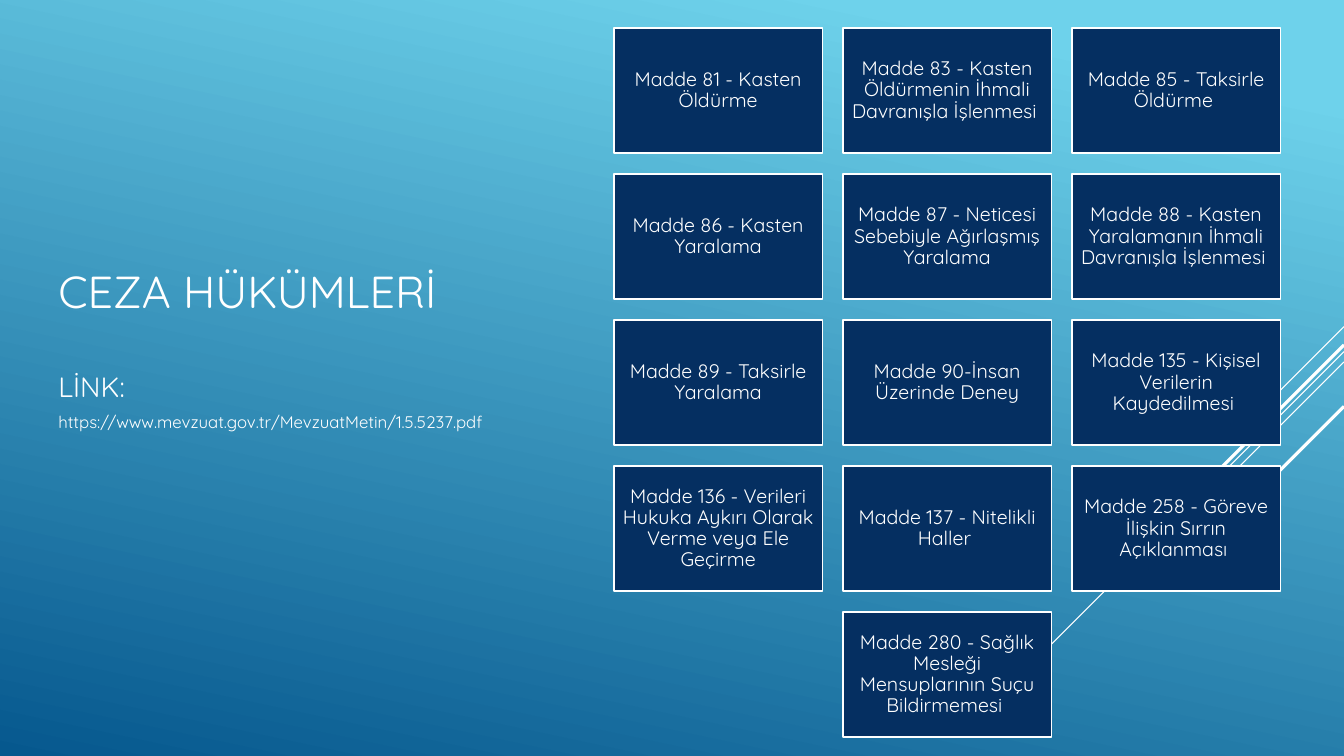
from lxml.etree import SubElement
from pptx import Presentation
from pptx.dml.color import RGBColor
from pptx.enum.shapes import MSO_CONNECTOR, MSO_SHAPE
from pptx.enum.text import MSO_ANCHOR as ANCHOR, PP_ALIGN as ALIGN
from pptx.oxml.ns import qn
from pptx.util import Cm, Pt

TITLE = "CEZA HÜKÜMLERİ"
LINK_LABEL = "LİNK:"
LINK = "https://www.mevzuat.gov.tr/MevzuatMetin/1.5.5237.pdf"
ARTICLES = [
    "Madde 81 - Kasten Öldürme",
    "Madde 83 - Kasten Öldürmenin İhmali Davranışla İşlenmesi ",
    "Madde 85 - Taksirle Öldürme ",
    "Madde 86 - Kasten Yaralama",
    "Madde 87 - Neticesi Sebebiyle Ağırlaşmış Yaralama",
    "Madde 88 - Kasten Yaralamanın İhmali Davranışla İşlenmesi ",
    "Madde 89 - Taksirle Yaralama",
    "Madde 90-İnsan Üzerinde Deney",
    "Madde 135 - Kişisel Verilerin Kaydedilmesi ",
    "Madde 136 - Verileri Hukuka Aykırı Olarak Verme veya Ele Geçirme",
    "Madde 137 - Nitelikli Haller ",
    "Madde 258 - Göreve İlişkin Sırrın Açıklanması ",
    "Madde 280 - Sağlık Mesleği Mensuplarının Suçu Bildirmemesi ",
]
# Diagonal rays: height at the right edge (cm), horizontal reach (cm), width (pt)
RAYS = [
    (8.23, 2.54, 0.75),
    (8.86, 8.28, 0.75),
    (9.12, 5.26, 0.75),
    (8.69, 4.85, 2.25),
    (10.24, 3.53, 2.25),
]
COLORS = {"sky": "6ED2EB", "sea": "06588E", "navy": "052F61", "white": "FFFFFF"}
FONT = "Quicksand"
SLIDE_W, SLIDE_H = 33.87, 19.05
COLUMNS = 3
CARD_W, CARD_H = 5.26, 3.15
GRID_LEFT, GRID_TOP = 15.47, 0.71
STEP_X, STEP_Y = 5.77, 3.68


def color(name):
    return RGBColor.from_string(COLORS[name])


def add_run(p, text, size):
    r = p.add_run()
    r.text = text
    r.font.name = FONT
    r.font.size = Pt(size)
    r.font.color.rgb = color("white")


def add_text_box(slide, left, top, width, height):
    tf = slide.shapes.add_textbox(Cm(left), Cm(top), Cm(width), Cm(height)).text_frame
    tf.word_wrap = True
    return tf


def paint_background(slide):
    fill = slide.background.fill
    fill.gradient()
    fill.gradient_angle = 258
    for stop, position, name in zip(fill.gradient_stops, (0.1, 1), ("sky", "sea")):
        stop.position = position
        stop.color.rgb = color(name)


def add_ray(slide, y, reach, width):
    """Draw a 45-degree line down and left from the right edge."""
    line = slide.shapes.add_connector(
        MSO_CONNECTOR.STRAIGHT, Cm(SLIDE_W), Cm(y), Cm(SLIDE_W - reach), Cm(y + reach))
    line.line.color.rgb = color("white")
    line.line.width = Pt(width)
    SubElement(line._element.spPr, qn("a:effectLst"))


def add_title(slide):
    tf = add_text_box(slide, 1.22, 1.1, 12.6, 14.76)
    tf.vertical_anchor = ANCHOR.MIDDLE
    title, label = tf.paragraphs[0], tf.add_paragraph()
    title.line_spacing = label.line_spacing = 0.9
    label.space_before = Pt(39)
    add_run(title, TITLE, 32)
    add_run(label, LINK_LABEL, 20)


def add_card(slide, left, top, text):
    sp = slide.shapes.add_shape(
        MSO_SHAPE.RECTANGLE, Cm(left), Cm(top), Cm(CARD_W), Cm(CARD_H))
    sp.shadow.inherit = False
    sp.fill.solid()
    sp.fill.fore_color.rgb = color("navy")
    sp.line.color.rgb = color("white")
    sp.line.width = Pt(1.25)
    tf = sp.text_frame
    tf.word_wrap = True
    tf.vertical_anchor = ANCHOR.MIDDLE
    tf.margin_left = tf.margin_right = tf.margin_top = tf.margin_bottom = Cm(0.15)
    p = tf.paragraphs[0]
    p.alignment = ALIGN.CENTER
    p.line_spacing = 0.9
    add_run(p, text, 14)


def add_cards(slide):
    """Fill the grid row by row, centring a row that is not full."""
    for start in range(0, len(ARTICLES), COLUMNS):
        row = ARTICLES[start:start + COLUMNS]
        left = GRID_LEFT + (COLUMNS - len(row)) / 2 * STEP_X
        top = GRID_TOP + start // COLUMNS * STEP_Y
        for i, text in enumerate(row):
            add_card(slide, left + i * STEP_X, top, text)


def main():
    prs = Presentation()
    prs.slide_width, prs.slide_height = Cm(SLIDE_W), Cm(SLIDE_H)
    slide = prs.slides.add_slide(prs.slide_layouts[6])
    paint_background(slide)
    for ray in RAYS:
        add_ray(slide, *ray)
    add_title(slide)
    add_cards(slide)
    link = add_text_box(slide, 1.22, 10.26, 13.1, 0.77)
    add_run(link.paragraphs[0], LINK, 12)
    prs.save("out.pptx")


if __name__ == "__main__":
    main()
